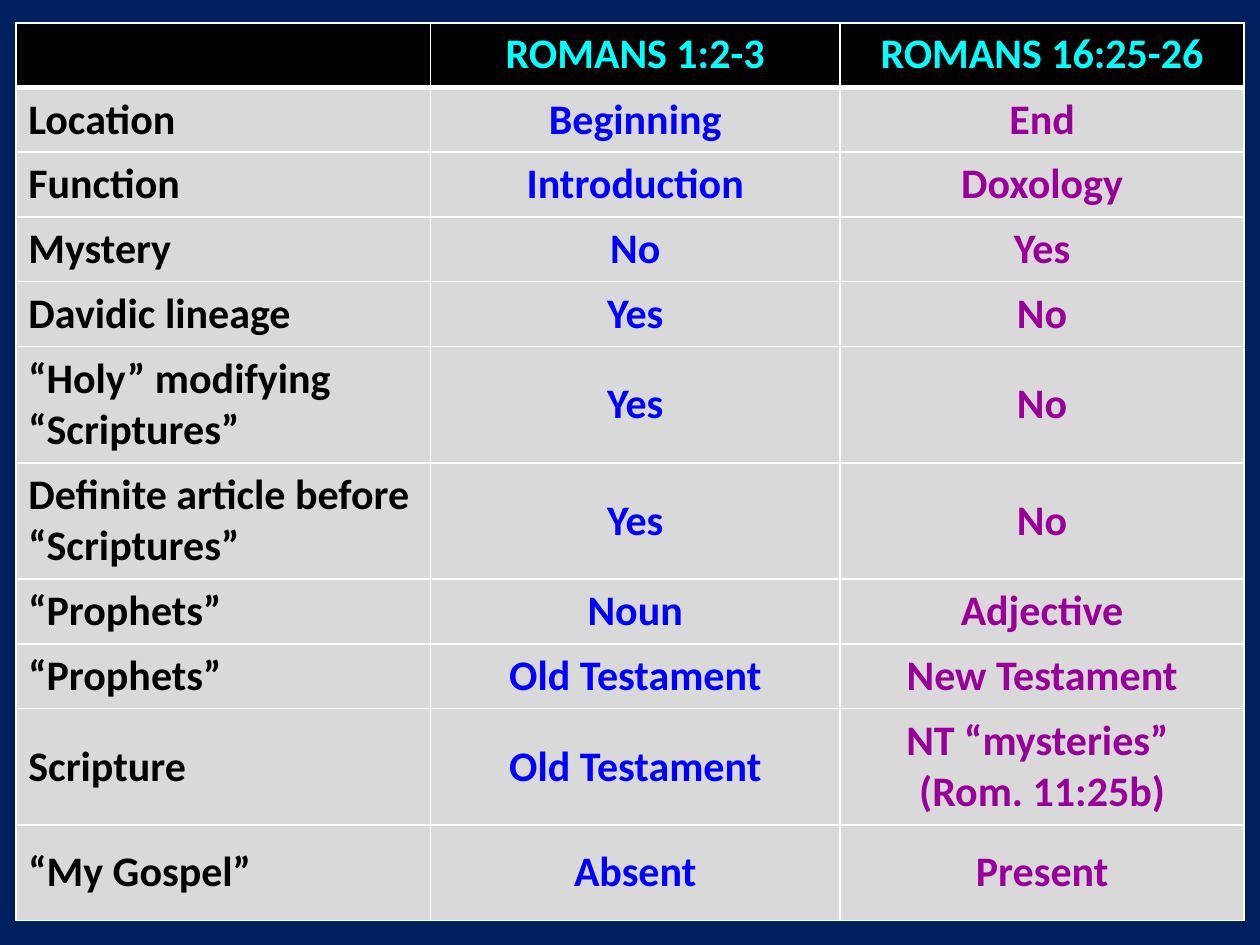
from dataclasses import dataclass

from pptx import Presentation
from pptx.dml.color import RGBColor as RGB
from pptx.enum.text import MSO_ANCHOR as ANCHOR, PP_ALIGN as ALIGN
from pptx.oxml.ns import qn
from pptx.util import Pt
from lxml.etree import SubElement


@dataclass(frozen=True)
class Theme:
    background: str = "002060"
    header_fill: str = "000000"
    header_text: str = "00FFFF"
    body_fill: str = "D9D9D9"
    column_text: tuple = ("000000", "0000FF", "990099")
    border: str = "FFFFFF"
    thin: float = 1
    thick: float = 3
    font: str = "Calibri"
    size: float = 24


HEADER = ("", "ROMANS 1:2-3", "ROMANS 16:25-26")
COMPARISON = [
    ("Location", "Beginning", "End"),
    ("Function", "Introduction", "Doxology"),
    ("Mystery", "No", "Yes"),
    ("Davidic lineage", "Yes", "No"),
    ("“Holy” modifying “Scriptures”", "Yes", "No"),
    ("Definite article before “Scriptures”", "Yes", "No"),
    ("“Prophets”", "Noun", "Adjective"),
    ("“Prophets”", "Old Testament", "New Testament"),
    ("Scripture", "Old Testament", "NT “mysteries” \n(Rom. 11:25b)"),
    ("“My Gospel”", "Absent", "Present"),
]
COLUMN_WIDTHS = (237, 234, 231)
SINGLE, DOUBLE, LAST = 37, 66.5, 54.5
ROW_HEIGHTS = [SINGLE] * 5 + [DOUBLE] * 2 + [SINGLE] * 2 + [DOUBLE, LAST]


class Deck:
    def __init__(self, prs, theme):
        self.theme = theme
        self.s = prs.slides.add_slide(prs.slide_layouts[6])
        fill = self.s.background.fill
        fill.solid()
        fill.fore_color.rgb = RGB.from_string(theme.background)

    def border(self, cell, side, width):
        ln = SubElement(cell._tc.get_or_add_tcPr(), qn(f"a:ln{side}"), w=str(Pt(width)))
        SubElement(SubElement(ln, qn("a:solidFill")), qn("a:srgbClr"), val=self.theme.border)

    def cell(self, cell, text, row, col):
        t = self.theme
        is_header = row == 0

        # Borders come before the fill; a thick rule separates header and body
        for side in "LRTB":
            is_rule = (row, side) in ((0, "B"), (1, "T"))
            self.border(cell, side, t.thick if is_rule else t.thin)
        cell.fill.solid()
        cell.fill.fore_color.rgb = RGB.from_string(t.header_fill if is_header else t.body_fill)

        # Text
        cell.vertical_anchor = ANCHOR.TOP if is_header else ANCHOR.MIDDLE
        cell.text_frame.text = text
        for p in cell.text_frame.paragraphs:
            p.alignment = ALIGN.CENTER if col else ALIGN.LEFT
            for r in p.runs:
                r.font.name, r.font.size, r.font.bold = t.font, Pt(t.size), True
                r.font.color.rgb = RGB.from_string(
                    t.header_text if is_header else t.column_text[col])

    def table(self, left, top, widths, heights, rows):
        table = self.s.shapes.add_table(
            len(rows), len(widths), Pt(left), Pt(top),
            Pt(sum(widths)), Pt(sum(heights))).table
        for column, width in zip(table.columns, widths):
            column.width = Pt(width)
        for i, (height, texts) in enumerate(zip(heights, rows)):
            table.rows[i].height = Pt(height)
            for j, text in enumerate(texts):
                self.cell(table.cell(i, j), text, i, j)


def main():
    prs = Presentation()
    prs.slide_width, prs.slide_height = Pt(720), Pt(540)
    deck = Deck(prs, Theme())

    # Comparison of the two passages
    deck.table(9, 13, COLUMN_WIDTHS, ROW_HEIGHTS, [HEADER, *COMPARISON])
    prs.save("out.pptx")


if __name__ == "__main__":
    main()
